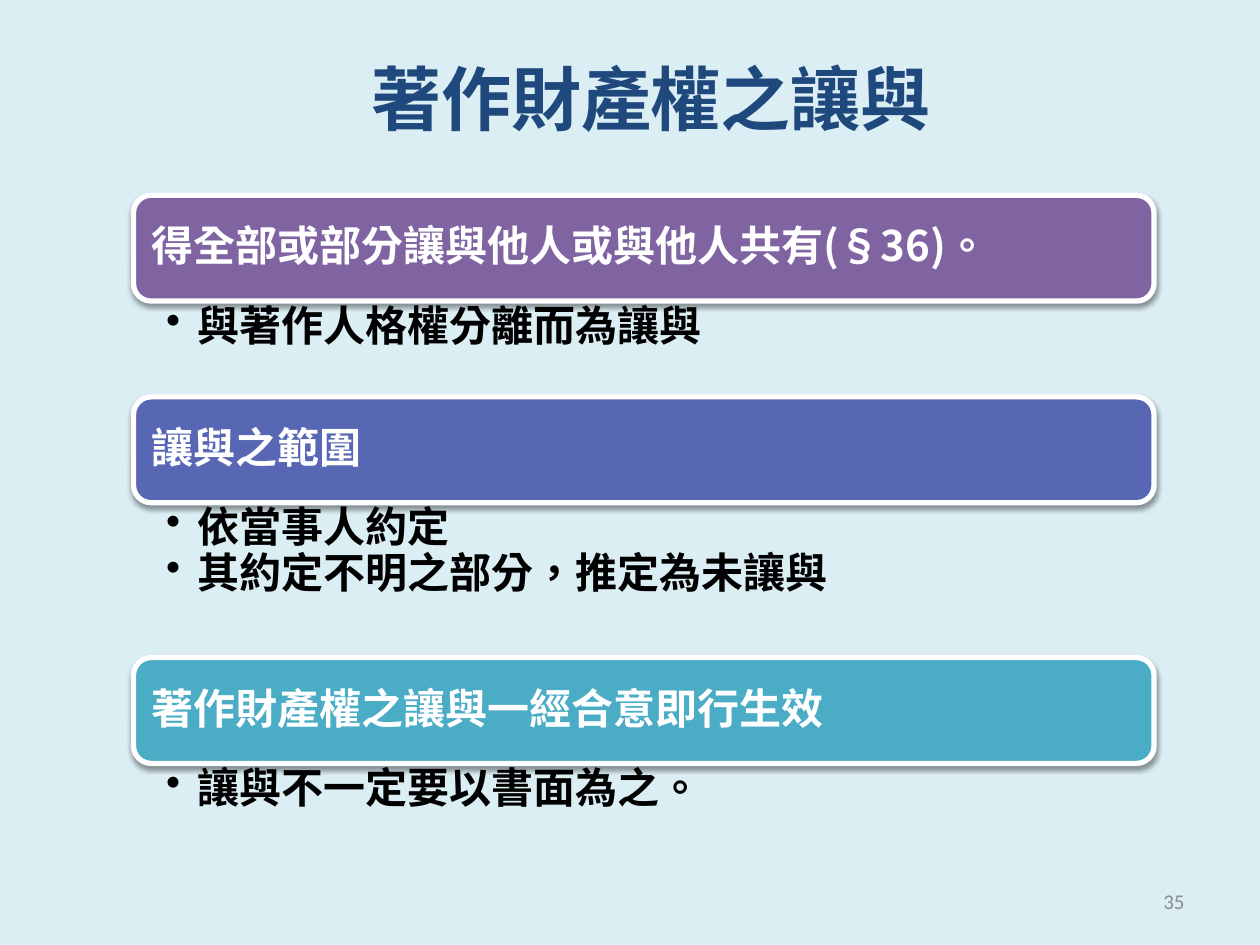
from lxml.etree import SubElement
from pptx import Presentation
from pptx.dml.color import RGBColor
from pptx.enum.shapes import MSO_SHAPE
from pptx.enum.text import MSO_ANCHOR, PP_ALIGN
from pptx.oxml.ns import qn
from pptx.util import Pt

HUES = {
    "back": "DBEEF4", "title": "1F497D", "white": "FFFFFF", "black": "000000",
    "grey": "8C8C8C", "purple": "8064A2", "indigo": "5767B4", "teal": "4BACC6",
}
CJK = "Noto Sans CJK SC"
LEFT, WIDTH, BAR = 76.3, 583.2, 60.5
PARTS = [
    ("purple", "得全部或部分讓與他人或與他人共有(§36)。", ["與著作人格權分離而為讓與"], 54.7),
    ("indigo", "讓與之範圍", ["依當事人約定", "其約定不明之部分，推定為未讓與"], 88.5),
    ("teal", "著作財產權之讓與一經合意即行生效", ["讓與不一定要以書面為之。"], 53.3),
]


def hue(name):
    return RGBColor.from_string(HUES[name])


def assign(item, values):
    for name, value in values.items():
        setattr(item, name, value)


def set_frame(frame, anchor, sides):
    """Set wrapping, anchor and the left, top, right, bottom insets."""
    left, top, right, bottom = map(Pt, sides)
    assign(frame, {
        "word_wrap": True, "vertical_anchor": anchor,
        "margin_left": left, "margin_top": top,
        "margin_right": right, "margin_bottom": bottom,
    })


def write(para, text, size, color, face=CJK, bold=True, **layout):
    assign(para, layout)
    run = para.add_run()
    run.text = text
    assign(run.font, {"size": Pt(size), "bold": bold, "name": face})
    run.font.color.rgb = hue(color)
    props = run.font._element
    props.set("lang", "zh-TW")
    SubElement(props, qn("a:ea"), typeface=face)


def add_bullet(para):
    props = para._p.get_or_add_pPr()
    props.set("marL", str(Pt(18)))
    props.set("indent", str(Pt(-18)))
    SubElement(props, qn("a:buChar"), char="•")


def add_shade(shape):
    shape.shadow.inherit = False
    effects = shape._element.spPr.find(qn("a:effectLst"))
    shade = SubElement(effects, qn("a:outerShdw"), blurRad=str(Pt(3.1)),
                       dist=str(Pt(1.6)), dir="5400000", rotWithShape="0")
    color = SubElement(shade, qn("a:srgbClr"), val=HUES["black"])
    SubElement(color, qn("a:alpha"), val="38000")


def add_title(slide, text):
    title = slide.shapes.title
    assign(title, {"left": Pt(48), "top": Pt(21), "width": Pt(648), "height": Pt(69)})
    set_frame(title.text_frame, MSO_ANCHOR.MIDDLE, (7.2, 3.6, 7.2, 3.6))
    write(title.text_frame.paragraphs[0], text, 40, "title", alignment=PP_ALIGN.CENTER)


def add_bar(slide, top, color, text):
    bar = slide.shapes.add_shape(MSO_SHAPE.ROUNDED_RECTANGLE,
                                 Pt(LEFT), Pt(top), Pt(WIDTH), Pt(BAR))
    bar.fill.solid()
    bar.fill.fore_color.rgb = hue(color)
    bar.line.color.rgb = hue("white")
    bar.line.width = Pt(3)
    add_shade(bar)
    set_frame(bar.text_frame, MSO_ANCHOR.MIDDLE, (7.2,) * 4)
    write(bar.text_frame.paragraphs[0], text, 24, "white",
          alignment=PP_ALIGN.LEFT, line_spacing=0.9)


def add_list(slide, top, height, lines):
    box = slide.shapes.add_textbox(Pt(LEFT), Pt(top), Pt(WIDTH), Pt(height))
    frame = box.text_frame
    set_frame(frame, MSO_ANCHOR.TOP, (18.7, 2.2, 13.7, 2.2))
    for index, line in enumerate(lines):
        para = frame.add_paragraph() if index else frame.paragraphs[0]
        write(para, line, 24, "black", level=1, line_spacing=0.9, space_after=Pt(0))
        add_bullet(para)


def add_number(slide, text):
    box = slide.shapes.add_textbox(Pt(516), Pt(500.5), Pt(168), Pt(28.8))
    set_frame(box.text_frame, MSO_ANCHOR.MIDDLE, (7.2, 3.6, 7.2, 3.6))
    write(box.text_frame.paragraphs[0], text, 12, "grey", "Calibri", False,
          alignment=PP_ALIGN.RIGHT)


def main():
    deck = Presentation()
    assign(deck, {"slide_width": Pt(720), "slide_height": Pt(540)})
    slide = deck.slides.add_slide(deck.slide_layouts[5])
    slide.background.fill.solid()
    slide.background.fill.fore_color.rgb = hue("back")
    add_title(slide, "著作財產權之讓與")
    top = 111.6
    for color, head, lines, height in PARTS:
        add_bar(slide, top, color, head)
        add_list(slide, top + BAR, height, lines)
        top += BAR + height
    add_number(slide, "35")
    deck.save("out.pptx")


if __name__ == "__main__":
    main()
